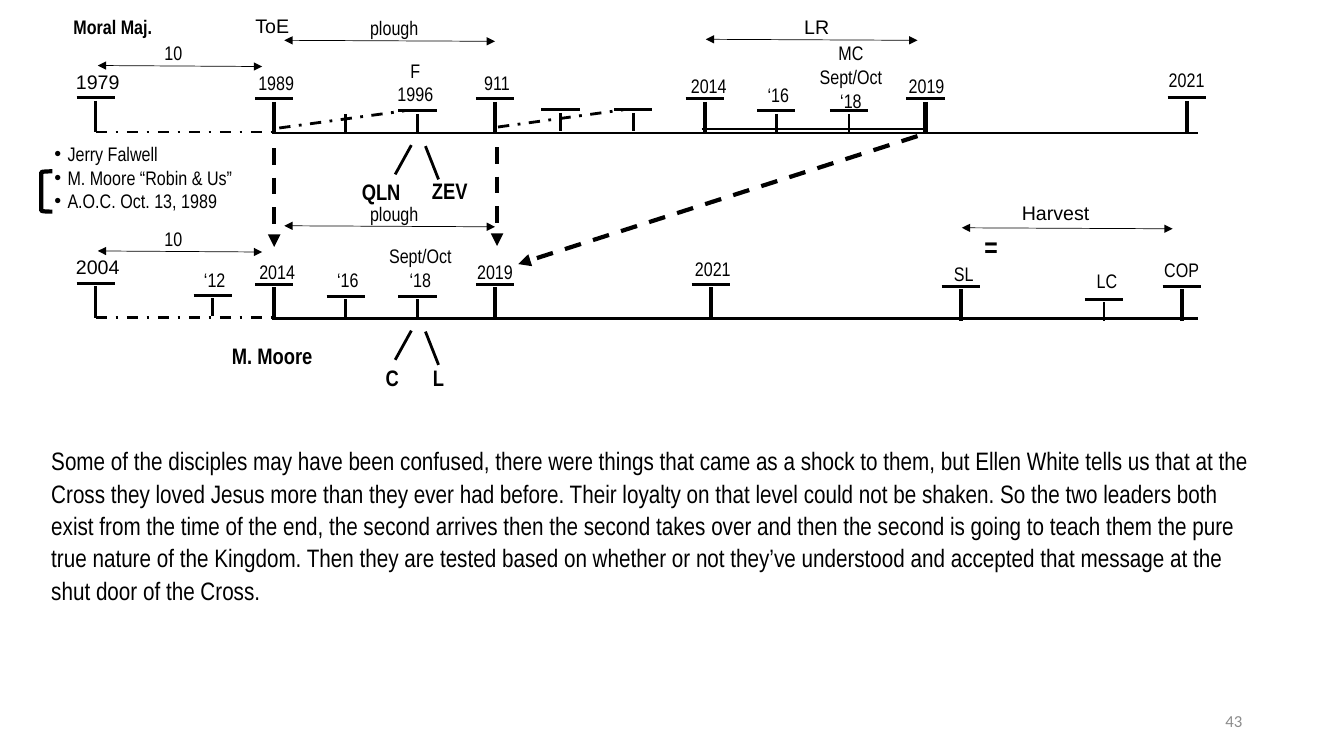
from dataclasses import dataclass
from typing import Optional

from pptx import Presentation
from pptx.dml.color import RGBColor
from pptx.enum.dml import MSO_LINE
from pptx.enum.shapes import MSO_CONNECTOR, MSO_SHAPE
from pptx.enum.text import MSO_ANCHOR, MSO_AUTO_SIZE, PP_ALIGN
from pptx.oxml.ns import qn
from pptx.slide import Slide
from pptx.util import Inches, Pt

BLACK = RGBColor(0x00, 0x00, 0x00)
GRAY = RGBColor(0x8C, 0x8C, 0x8C)
NARROW = "Arial Narrow"
ARIAL = "Arial"
ROW_SHIFT = 1.84
BAR_WIDTH = 0.38
STEM_GAP = 0.03


@dataclass(frozen=True)
class Label:
    """Centred text; several lines are separated by newlines."""
    text: str
    center: float
    top: float
    width: float = 0.94
    height: float = 0.31
    font: str = NARROW
    size: int = 14
    bold: bool = False


@dataclass(frozen=True)
class Line:
    x1: float
    y1: float
    x2: float
    y2: float
    weight: float = 2
    dash: Optional[MSO_LINE] = None
    head: bool = False
    tail: bool = False


@dataclass(frozen=True)
class Mark:
    """Waymark: a bar with a stem standing on the timeline."""
    x: float
    top: float
    stem: float = 0.31
    weight: float = 3
    bar: bool = True


def span(x1: float, x2: float, y: float) -> Line:
    return Line(x1, y, x2, y + 0.01, weight=0.5, head=True, tail=True)


def minor(x: float, top: float, bar: bool = True) -> Mark:
    return Mark(x, top, stem=0.18, weight=2, bar=bar)


def bold(text: str, center: float, top: float, width: float) -> Label:
    return Label(text, center, top, width, 0.38, size=16, bold=True)


# Parts that both timelines have, placed for the upper one
SHARED_LINES = [
    Line(2.7, 1.32, 11.88, 1.32),
    Line(0.95, 1.31, 2.72, 1.31, dash=MSO_LINE.DASH_DOT),
    Line(3.92, 1.73, 4.08, 1.44),
    Line(4.22, 1.45, 4.35, 1.78),
    span(0.97, 2.6, 0.65),
    span(2.82, 4.91, 0.4),
]
SHARED_MARKS = [Mark(0.95, 0.97, weight=2), Mark(2.72, 0.98), Mark(4.91, 0.98),
                minor(4.14, 1.1)]
SHARED_LABELS = [Label("10", 1.72, 0.37, 0.92, 0.44),
                 Label("plough", 3.91, 0.12, 1.62, 0.44)]

LINES = [
    Line(2.77, 1.27, 4.01, 1.1, dash=MSO_LINE.DASH_DOT),
    Line(4.94, 1.26, 6.18, 1.09, dash=MSO_LINE.DASH_DOT),
    Line(6.96, 1.28, 9.17, 1.28),
    span(7, 9.1, 0.39),
    span(9.54, 11.63, 2.26),
    Line(4.93, 1.46, 4.93, 2.44, 3, MSO_LINE.DASH, tail=True),
    Line(9.1, 1.35, 5.14, 2.62, 3, MSO_LINE.DASH, tail=True),
    Line(2.72, 1.47, 2.72, 2.45, 3, MSO_LINE.DASH, tail=True),
]
MARKS = [
    minor(3.43, 1.1, bar=False), minor(5.56, 1.09), minor(6.28, 1.09),
    Mark(6.99, 0.98), minor(7.7, 1.1), minor(8.42, 1.1), Mark(9.18, 0.98),
    Mark(11.77, 0.97),
    minor(2.11, 2.93), minor(3.43, 2.94), Mark(7.05, 2.82), Mark(9.53, 2.84),
    minor(10.95, 2.97), Mark(11.72, 2.84),
]
LABELS = [
    Label("Moral Maj.", 1.12, 0.11, 0.9, 0.44, bold=True),
    Label("ToE", 2.7, 0.1, 0.62, 0.44, ARIAL),
    Label("LR", 8.1, 0.11, 1.62, 0.44, ARIAL),
    Label("1979", 0.97, 0.65, font=ARIAL),
    Label("1989", 2.74, 0.66),
    Label("F\n1996", 4.12, 0.54, height=0.62),
    Label("911", 4.93, 0.66),
    Label("2014", 7.03, 0.69, 0.66),
    Label("‘16", 7.72, 0.78),
    Label("MC\nSept/Oct\n‘18", 8.44, 0.37, height=0.72),
    Label("2019", 9.19, 0.69, 0.77),
    Label("2021", 11.77, 0.63),
    bold("QLN", 3.78, 1.73, 0.49),
    bold("ZEV", 4.46, 1.72, 0.51),
    Label("Harvest", 10.47, 1.95, 1.62, 0.44, ARIAL),
    Label("=", 9.83, 2.24, 0.64, size=20, bold=True),
    Label("2004", 0.97, 2.49, font=ARIAL),
    Label("‘12", 2.13, 2.62),
    Label("2014", 2.75, 2.54, 0.66),
    Label("‘16", 3.45, 2.62),
    Label("Sept/Oct\n‘18", 4.17, 2.38, height=0.55),
    Label("2019", 4.91, 2.54, 0.77),
    Label("2021", 7.07, 2.51),
    Label("SL", 9.56, 2.56, 0.66),
    Label("LC", 10.98, 2.63),
    Label("COP", 11.72, 2.52, 0.64, 0.41),
    bold("M. Moore", 2.7, 3.35, 0.9),
    bold("C", 3.89, 3.57, 0.28),
    bold("L", 4.35, 3.57, 0.28),
]
PEOPLE = "Jerry Falwell\nM. Moore “Robin & Us”\nA.O.C. Oct. 13, 1989"
BODY = (
    "Some of the disciples may have been confused, there were things that came as a "
    "shock to them, but Ellen White tells us that at the Cross they loved Jesus more "
    "than they ever had before. Their loyalty on that level could not be shaken. So "
    "the two leaders both exist from the time of the end, the second arrives then the "
    "second takes over and then the second is going to teach them the pure true nature "
    "of the Kingdom. Then they are tested based on whether or not they’ve understood "
    "and accepted that message at the shut door of the Cross."
)


def add_text(slide: Slide, text: str, left: float, top: float, width: float,
             height: float, *, font: str = NARROW, size: int = 14,
             bold: bool = False, color: RGBColor = BLACK,
             align: PP_ALIGN = PP_ALIGN.LEFT, anchor: MSO_ANCHOR = MSO_ANCHOR.TOP,
             inset: Optional[float] = 0.04, spacing: Optional[float] = None,
             bullet: bool = False, grow: bool = False) -> None:
    box = slide.shapes.add_textbox(Inches(left), Inches(top), Inches(width), Inches(height))
    frame = box.text_frame
    frame.word_wrap = True
    frame.vertical_anchor = anchor
    if grow:
        frame.auto_size = MSO_AUTO_SIZE.SHAPE_TO_FIT_TEXT
    if inset is not None:
        frame.margin_left = frame.margin_right = Inches(inset)
        frame.margin_top = frame.margin_bottom = Inches(inset)
    frame.text = text
    for paragraph in frame.paragraphs:
        paragraph.alignment = align
        paragraph.line_spacing = spacing
        run_font = paragraph.runs[0].font
        run_font.name, run_font.size, run_font.bold = font, Pt(size), bold
        run_font.color.rgb = color
        if bullet:
            properties = paragraph._p.get_or_add_pPr()
            properties.set("marL", str(Inches(0.13)))
            properties.set("indent", str(-Inches(0.13)))
            for tag, attributes in (("a:buFont", {"typeface": ARIAL}),
                                    ("a:buChar", {"char": "•"})):
                properties.append(properties.makeelement(qn(tag), attributes))


def add_label(slide: Slide, label: Label, shift: float = 0) -> None:
    add_text(slide, label.text, label.center - label.width / 2, label.top + shift,
             label.width, label.height, font=label.font, size=label.size,
             bold=label.bold, align=PP_ALIGN.CENTER)


def add_line(slide: Slide, line: Line, shift: float = 0) -> None:
    connector = slide.shapes.add_connector(
        MSO_CONNECTOR.STRAIGHT, Inches(line.x1), Inches(line.y1 + shift),
        Inches(line.x2), Inches(line.y2 + shift))
    connector.line.color.rgb = BLACK
    connector.line.width = Pt(line.weight)
    if line.dash is not None:
        connector.line.dash_style = line.dash
    outline = connector.line._get_or_add_ln()
    for tag, wanted in (("a:headEnd", line.head), ("a:tailEnd", line.tail)):
        if wanted:
            outline.append(outline.makeelement(qn(tag), {"type": "triangle"}))
    properties = connector._element.spPr
    properties.append(properties.makeelement(qn("a:effectLst")))


def add_mark(slide: Slide, mark: Mark, shift: float = 0) -> None:
    start = mark.top + STEM_GAP
    add_line(slide, Line(mark.x, start, mark.x, start + mark.stem, mark.weight), shift)
    if mark.bar:
        half = BAR_WIDTH / 2
        add_line(slide, Line(mark.x - half, mark.top, mark.x + half, mark.top), shift)


def add_bracket(slide: Slide) -> None:
    bracket = slide.shapes.add_shape(MSO_SHAPE.LEFT_BRACKET, Inches(0.41), Inches(1.7),
                                     Inches(0.11), Inches(0.4))
    bracket.shadow.inherit = False
    bracket.fill.background()
    bracket.line.color.rgb = BLACK
    bracket.line.width = Pt(3)


def main() -> None:
    presentation = Presentation()
    presentation.slide_width, presentation.slide_height = Inches(13.33), Inches(7.5)
    slide = presentation.slides.add_slide(presentation.slide_layouts[6])
    rows = [(SHARED_LINES, SHARED_MARKS, SHARED_LABELS, shift) for shift in (0, ROW_SHIFT)]
    for lines, marks, labels, shift in rows + [(LINES, MARKS, LABELS, 0)]:
        for line in lines:
            add_line(slide, line, shift)
        for mark in marks:
            add_mark(slide, mark, shift)
        for label in labels:
            add_label(slide, label, shift)
    add_text(slide, PEOPLE, 0.5, 1.37, 2, 0.79, bullet=True)
    add_bracket(slide)
    add_text(slide, BODY, 0.41, 4.35, 12.18, 1.7, size=18, inset=None, spacing=1.07, grow=True)
    add_text(slide, "43", 9.42, 6.95, 3, 0.4, font="Calibri", size=12, color=GRAY,
             align=PP_ALIGN.RIGHT, anchor=MSO_ANCHOR.MIDDLE, inset=None)
    presentation.save("out.pptx")


if __name__ == "__main__":
    main()
